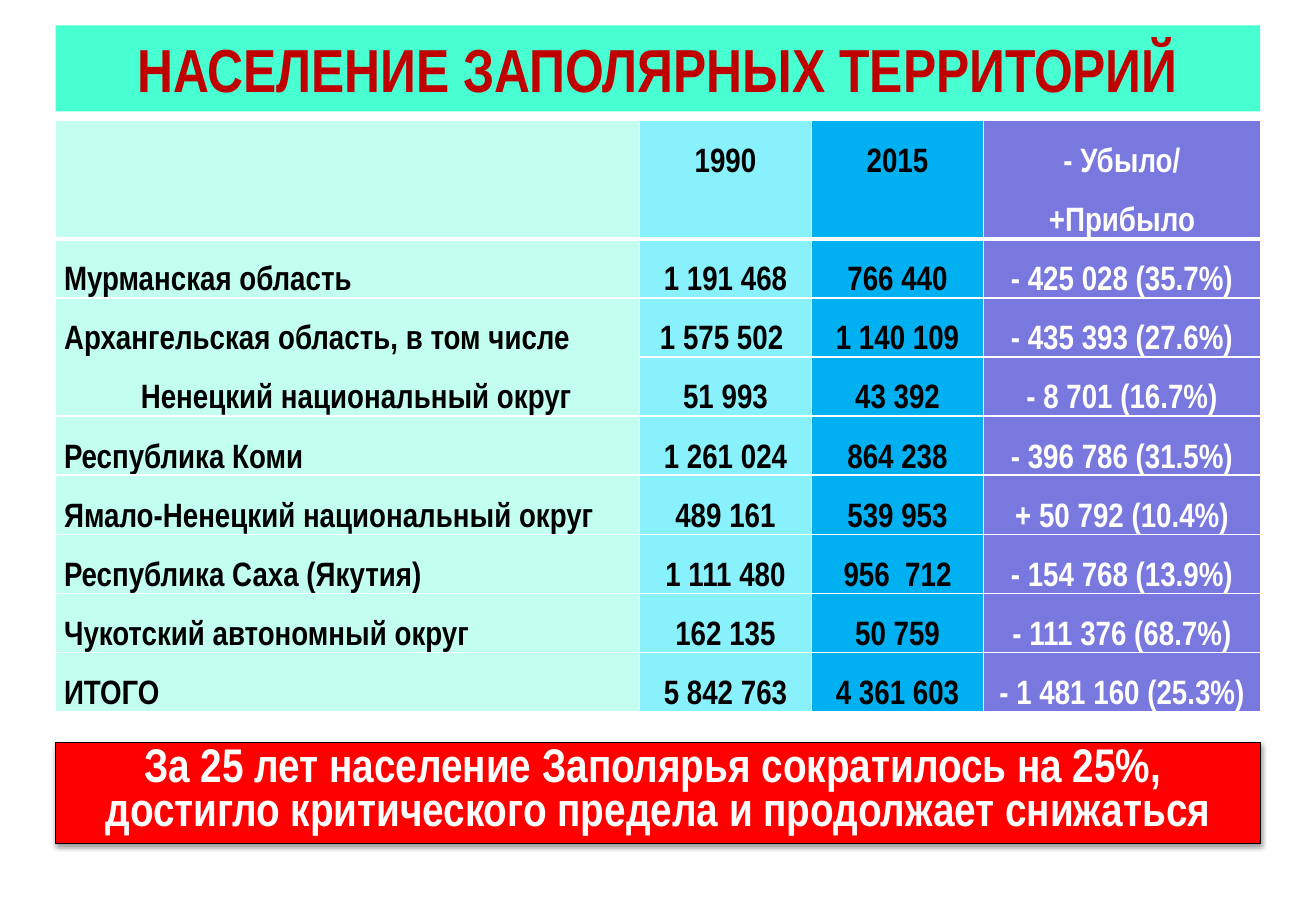
import pptx
import pptx.dml.color
import pptx.enum.shapes
import pptx.enum.text
import pptx.oxml
import pptx.oxml.ns
import pptx.util

Pt = pptx.util.Pt
RGBColor = pptx.dml.color.RGBColor
PP_ALIGN = pptx.enum.text.PP_ALIGN
MSO_ANCHOR = pptx.enum.text.MSO_ANCHOR

BLACK = RGBColor(0x00, 0x00, 0x00)
WHITE = RGBColor(0xFF, 0xFF, 0xFF)
DARK_RED = RGBColor(0xC0, 0x00, 0x00)
RED = RGBColor(0xFF, 0x00, 0x00)
TURQUOISE = RGBColor(0x47, 0xFF, 0xD1)
MINT = RGBColor(0xC2, 0xFF, 0xF0)
AQUA = RGBColor(0x88, 0xF1, 0xFC)
BLUE = RGBColor(0x00, 0xB0, 0xF0)
VIOLET = RGBColor(0x78, 0x78, 0xDE)

LEFT, WIDTH = 33, 714
ROW_HEIGHT = 35
SUBREGION_INDENT = 45.5

# Column width, fill, text colour, alignment
COLUMNS = [
    (346, MINT, BLACK, PP_ALIGN.LEFT),
    (102, AQUA, BLACK, PP_ALIGN.CENTER),
    (102, BLUE, BLACK, PP_ALIGN.CENTER),
    (164, VIOLET, WHITE, PP_ALIGN.CENTER),
]

POPULATION = [
    ("", "1990", "2015", "- Убыло/ +Прибыло"),
    ("Мурманская область", "1 191 468", "766 440", "- 425 028 (35.7%)"),
    ("Архангельская область, в том числе\nНенецкий национальный округ",
     "1 575 502 ", "1 140 109", "- 435 393 (27.6%)"),
    ("", "51 993", "43 392", "- 8 701 (16.7%)"),
    ("Республика Коми", "1 261 024", "864 238", "- 396 786 (31.5%)"),
    ("Ямало-Ненецкий национальный округ", "489 161", "539 953", "+ 50 792 (10.4%)"),
    ("Республика Саха (Якутия)", "1 111 480", "956  712", "- 154 768 (13.9%)"),
    ("Чукотский автономный округ", "162 135", "50 759", "- 111 376 (68.7%)"),
    ("ИТОГО", "5 842 763", "4 361 603", "- 1 481 160 (25.3%)"),
]
ARKHANGELSK_ROW = 2


class SlideBuilder:
    font_name = "Arial Narrow"

    def __init__(self, slide):
        self.slide = slide

    def fill_text(self, frame, text, size, color, align, spacing=None):
        frame.text = text
        for paragraph in frame.paragraphs:
            paragraph.alignment = align
            paragraph.line_spacing = spacing
            for run in paragraph.runs:
                run.font.name = self.font_name
                run.font.size = Pt(size)
                run.font.bold = True
                run.font.color.rgb = color

    def title(self, text, top, height):
        heading = self.slide.shapes.title
        heading.left, heading.top = Pt(LEFT), Pt(top)
        heading.width, heading.height = Pt(WIDTH), Pt(height)
        heading.fill.solid()
        heading.fill.fore_color.rgb = TURQUOISE
        frame = heading.text_frame
        frame.auto_size = pptx.enum.text.MSO_AUTO_SIZE.NONE
        frame.vertical_anchor = MSO_ANCHOR.MIDDLE
        self.fill_text(frame, text, 36, DARK_RED, PP_ALIGN.CENTER)

    def borders(self, cell, top, bottom):
        properties = cell._tc.get_or_add_tcPr()
        for side, width in (("L", 1), ("R", 1), ("T", top), ("B", bottom)):
            properties.append(pptx.oxml.parse_xml(
                f'<a:ln{side} {pptx.oxml.ns.nsdecls("a")} w="{Pt(width)}">'
                f'<a:solidFill><a:srgbClr val="{WHITE}"/></a:solidFill></a:ln{side}>'))

    def table(self, rows, top):
        heights = [2 * ROW_HEIGHT] + [ROW_HEIGHT] * (len(rows) - 1)
        grid = self.slide.shapes.add_table(
            len(rows), len(COLUMNS), Pt(LEFT), Pt(top), Pt(WIDTH), Pt(sum(heights))).table
        grid.horz_banding = False
        for row, height in zip(grid.rows, heights):
            row.height = Pt(height)
        for c, (width, fill, color, align) in enumerate(COLUMNS):
            grid.columns[c].width = Pt(width)
            for r, values in enumerate(rows):
                cell = grid.cell(r, c)
                cell.margin_left = cell.margin_right = Pt(5)
                cell.margin_top = cell.margin_bottom = Pt(0)
                self.borders(cell, 3 if r == 1 else 1, 3 if r == 0 else 1)
                cell.fill.solid()
                cell.fill.fore_color.rgb = fill
                if values[c]:
                    self.fill_text(cell.text_frame, values[c], 20, color, align, Pt(ROW_HEIGHT))
        return grid

    def banner(self, text, top, height):
        box = self.slide.shapes.add_shape(
            pptx.enum.shapes.MSO_SHAPE.RECTANGLE, Pt(LEFT), Pt(top), Pt(WIDTH), Pt(height))
        box.fill.solid()
        box.fill.fore_color.rgb = RED
        box.line.color.rgb = BLACK
        box.line.width = Pt(0.75)
        box._element.spPr.append(pptx.oxml.parse_xml(
            f'<a:effectLst {pptx.oxml.ns.nsdecls("a")}>'
            f'<a:outerShdw blurRad="{Pt(3.1)}" dist="{Pt(1.6)}" dir="5400000" rotWithShape="0">'
            f'<a:srgbClr val="{BLACK}"><a:alpha val="38000"/></a:srgbClr>'
            '</a:outerShdw></a:effectLst>'))
        box.text_frame.word_wrap = True
        box.text_frame.vertical_anchor = MSO_ANCHOR.TOP
        self.fill_text(box.text_frame, text, 28, WHITE, PP_ALIGN.CENTER, Pt(26))


def main():
    presentation = pptx.Presentation()
    presentation.slide_width, presentation.slide_height = Pt(780), Pt(540)
    title_only = presentation.slide_layouts[5]
    builder = SlideBuilder(presentation.slides.add_slide(title_only))

    # Heading
    builder.title("НАСЕЛЕНИЕ ЗАПОЛЯРНЫХ ТЕРРИТОРИЙ", 15, 51)

    # Population by territory, with the subregion indented under its region
    population = builder.table(POPULATION, 71.5)
    arkhangelsk = population.cell(ARKHANGELSK_ROW, 0)
    arkhangelsk.merge(population.cell(ARKHANGELSK_ROW + 1, 0))
    subregion = arkhangelsk.text_frame.paragraphs[1]
    subregion._p.get_or_add_pPr().set("marL", str(Pt(SUBREGION_INDENT)))

    # Conclusion
    builder.banner("За 25 лет население Заполярья сократилось на 25%, \n"
                   "достигло критического предела и продолжает снижаться", 440, 60)

    presentation.save("out.pptx")


if __name__ == "__main__":
    main()
